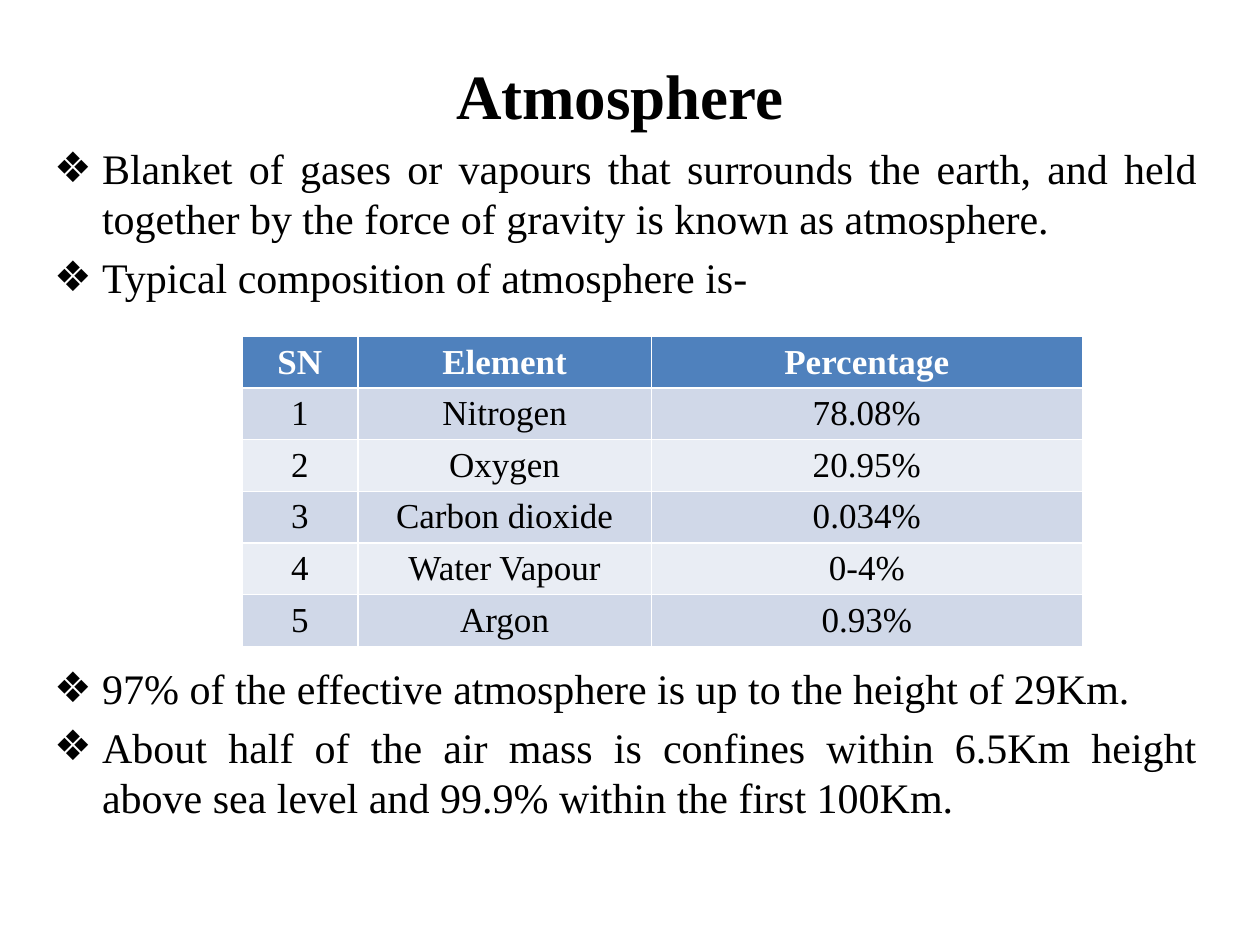
from lxml.etree import SubElement
from pptx import Presentation
from pptx.dml.color import RGBColor
from pptx.enum.text import MSO_ANCHOR, MSO_AUTO_SIZE, PP_ALIGN
from pptx.oxml.ns import qn
from pptx.util import Inches, Pt

FONT = "Times New Roman"
BLACK, WHITE, HEADER = "000000", "FFFFFF", "4F81BD"
BANDS = ("D0D8E8", "E9EDF4")
TABLE_GAP = Pt(206)
STATEMENTS = [
    ("Blanket of gases or vapours that surrounds the earth, and held together "
     "by the force of gravity is known as atmosphere.", None),
    ("Typical composition of atmosphere is-", None),
    ("97% of the effective atmosphere is up to the height of 29Km.", TABLE_GAP),
    ("About half of the air mass is confines within 6.5Km height above sea "
     "level and 99.9% within the first 100Km.", None),
]
COLUMN_WIDTHS = (0.92, 2.33, 3.42)
COMPOSITION = [
    ("SN", "Element", "Percentage"),
    ("1", "Nitrogen", "78.08%"),
    ("2", "Oxygen", "20.95%"),
    ("3", "Carbon dioxide", "0.034%"),
    ("4", "Water Vapour", "0-4%"),
    ("5", "Argon", "0.93%"),
]


def color(value):
    """Turn a hex string into a colour."""
    return RGBColor.from_string(value)


def place(shape, left, top, width, height):
    """Move and size a shape, in inches."""
    shape.left, shape.top = Inches(left), Inches(top)
    shape.width, shape.height = Inches(width), Inches(height)


def format_paragraph(paragraph, size, alignment, text_color=BLACK, bold=False):
    """Set the alignment and font of a paragraph."""
    paragraph.alignment = alignment
    font = paragraph.font
    font.name, font.size, font.bold = FONT, Pt(size), bold
    font.color.rgb = color(text_color)


def add_bullet(paragraph, character, indent):
    """Give a paragraph a hanging bullet."""
    properties = paragraph._p.get_or_add_pPr()
    properties.set("marL", str(Inches(indent)))
    properties.set("indent", str(-Inches(indent)))
    SubElement(properties, qn("a:buChar")).set("char", character)


def fill_title(title, text, *box):
    """Place the title and write its text."""
    place(title, *box)
    title.text_frame.text = text
    title.text_frame.vertical_anchor = MSO_ANCHOR.MIDDLE
    format_paragraph(title.text_frame.paragraphs[0], 36, PP_ALIGN.CENTER, bold=True)


def fill_statements(body, statements, *box):
    """Place the body and write its bulleted statements."""
    place(body, *box)
    frame = body.text_frame
    frame.auto_size = MSO_AUTO_SIZE.NONE
    frame.text = "\n".join(text for text, _ in statements)
    for paragraph, (_, gap) in zip(frame.paragraphs, statements):
        format_paragraph(paragraph, 24, PP_ALIGN.JUSTIFY)
        if gap:
            paragraph.space_before = gap
        add_bullet(paragraph, "❖", 0.38)


def add_composition_table(slide, rows, left, top, row_height):
    """Add the table of gases with a header and banded rows."""
    table = slide.shapes.add_table(
        len(rows), len(COLUMN_WIDTHS), Inches(left), Inches(top),
        Inches(sum(COLUMN_WIDTHS)), Inches(row_height * len(rows))).table
    for column, width in zip(table.columns, COLUMN_WIDTHS):
        column.width = Inches(width)
    for row_index, row in enumerate(rows):
        is_header = row_index == 0
        for column_index, text in enumerate(row):
            cell = table.cell(row_index, column_index)
            cell.text = text
            cell.fill.solid()
            cell.fill.fore_color.rgb = color(
                HEADER if is_header else BANDS[(row_index - 1) % 2])
            format_paragraph(cell.text_frame.paragraphs[0], 20, PP_ALIGN.CENTER,
                             WHITE if is_header else BLACK, is_header)


def main():
    """Build and save the slide."""
    presentation = Presentation()
    presentation.slide_width, presentation.slide_height = Inches(10), Inches(7.5)
    slide = presentation.slides.add_slide(presentation.slide_layouts[1])
    fill_title(slide.shapes.title, "Atmosphere", 0.42, 0.25, 9, 1)
    fill_statements(slide.placeholders[1], STATEMENTS, 0.33, 1.08, 9.27, 5.75)
    add_composition_table(slide, COMPOSITION, 1.92, 2.67, 0.41)
    presentation.save("out.pptx")


if __name__ == "__main__":
    main()
